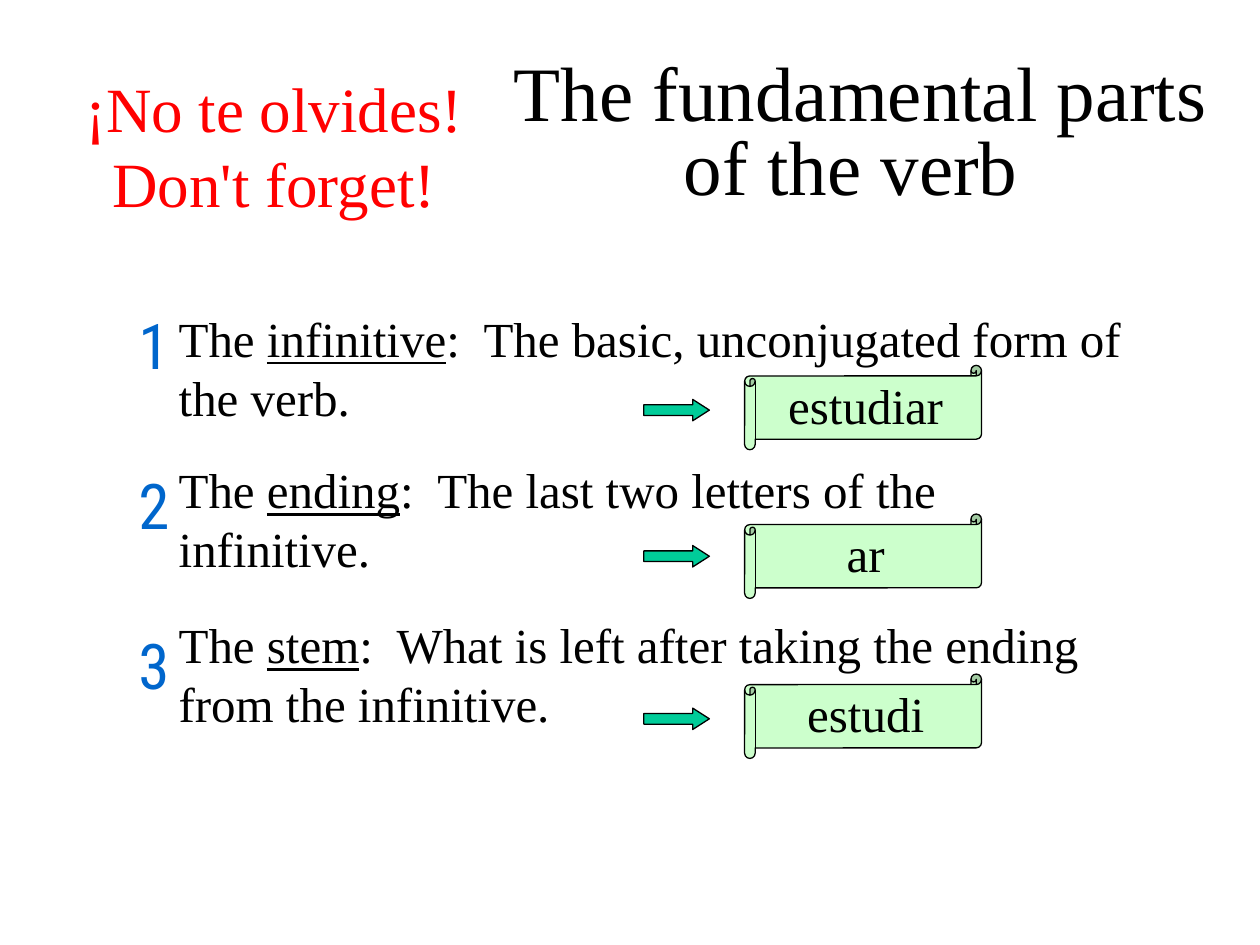
"""Build a slide on the three fundamental parts of a Spanish verb."""
from dataclasses import dataclass

from pptx import Presentation, util as u
from pptx.dml.color import RGBColor
from pptx.enum import shapes, text

TITLE = "The fundamental parts of the verb "
REMINDER = ["¡No te olvides!", "Don't forget!"]
PARTS = [
    dict(term="infinitive", meaning="The basic, unconjugated form of the verb.", example="estudiar",
         tops=dict(number=2.38, definition=2.4, arrow=3.17, scroll=2.9)),
    dict(term="ending", meaning="The last two letters of the infinitive.", example="ar",
         tops=dict(number=3.65, definition=3.6, arrow=4.33, scroll=4.08)),
    dict(term="stem", meaning="What is left after taking the ending from the infinitive.", example="estudi",
         tops=dict(number=4.92, definition=4.83, arrow=5.62, scroll=5.35)),
]
COLUMNS = dict(number=(1, 0.27, 0.5), definition=(1.32, 7.73, 1.25),
               arrow=(5.11, 0.52, 0.17), scroll=(5.91, 1.88, 0.67))


@dataclass(frozen=True)
class Theme:
    ink: str = "000000"
    alert: str = "FF0000"
    number: str = "0066CC"
    arrow: str = "00CC99"
    scroll: str = "CCFFCC"
    serif: str = "Times New Roman"
    condensed: str = "Roboto Condensed"
    title_size: int = 44
    accent_size: int = 36
    body_size: int = 28
    line_width: float = 0.75


THEME = Theme()


def write(box, paragraphs, *, size=THEME.body_size, color=THEME.ink, font=THEME.serif,
          align=text.PP_ALIGN.CENTER, anchor=text.MSO_ANCHOR.TOP, wrap=False,
          line_spacing=None, space_before=0):
    """Fill a box with paragraphs, each a list of (wording, underlined) spans."""
    frame = box.text_frame
    frame.word_wrap = wrap
    frame.vertical_anchor = anchor
    for index, spans in enumerate(paragraphs):
        para = frame.add_paragraph() if index else frame.paragraphs[0]
        para.alignment = align
        para.line_spacing = line_spacing
        para.space_before = u.Pt(space_before)
        for wording, underlined in spans:
            span = para.add_run()
            span.text = wording
            span.font.name = font
            span.font.size = u.Pt(size)
            span.font.underline = underlined
            span.font.color.rgb = RGBColor.from_string(color)


def add_box(page, left, top, width, height):
    """Add a text box measured in inches."""
    return page.shapes.add_textbox(*map(u.Inches, (left, top, width, height)))


def add_preset(page, kind, place, fill, adjustments):
    """Add a filled, thinly outlined preset shape."""
    shape = page.shapes.add_shape(kind, *map(u.Inches, place))
    shape.shadow.inherit = False
    shape.fill.solid()
    shape.fill.fore_color.rgb = RGBColor.from_string(fill)
    shape.line.color.rgb = RGBColor.from_string(THEME.ink)
    shape.line.width = u.Pt(THEME.line_width)
    for index, value in enumerate(adjustments):
        shape.adjustments[index] = value
    return shape


def add_part(page, number, part):
    """Add one numbered definition with its arrow and example scroll."""
    places = {}
    for name, (left, width, height) in COLUMNS.items():
        places[name] = (left, part["tops"][name], width, height)
    write(add_box(page, *places["definition"]),
          [[("The ", False), (part["term"], True), (":  " + part["meaning"], False)]],
          align=text.PP_ALIGN.LEFT, wrap=True, space_before=0.2 * THEME.body_size)
    write(add_box(page, *places["number"]), [[(str(number), False)]],
          size=THEME.accent_size, color=THEME.number, font=THEME.condensed)
    add_preset(page, shapes.MSO_SHAPE.RIGHT_ARROW, places["arrow"], THEME.arrow, (0.5, 0.78))
    scroll = add_preset(page, shapes.MSO_SHAPE.HORIZONTAL_SCROLL, places["scroll"],
                        THEME.scroll, (0.125,))
    scroll.text_frame.margin_top = 0
    write(scroll, [[(part["example"], False)]], anchor=text.MSO_ANCHOR.MIDDLE)


def main():
    """Assemble and save the deck."""
    deck = Presentation()
    deck.slide_width, deck.slide_height = u.Inches(10), u.Inches(7.5)
    page = deck.slides.add_slide(deck.slide_layouts[6])
    write(add_box(page, 3.83, 0.25, 6, 1.67), [[(TITLE, False)]], size=THEME.title_size,
          anchor=text.MSO_ANCHOR.MIDDLE, wrap=True, line_spacing=0.8)
    write(add_box(page, 0.43, 0.5, 3.49, 1.67), [[(line, False)] for line in REMINDER],
          size=THEME.accent_size, color=THEME.alert)
    for number, part in enumerate(PARTS, start=1):
        add_part(page, number, part)
    deck.save("out.pptx")


if __name__ == "__main__":
    main()
